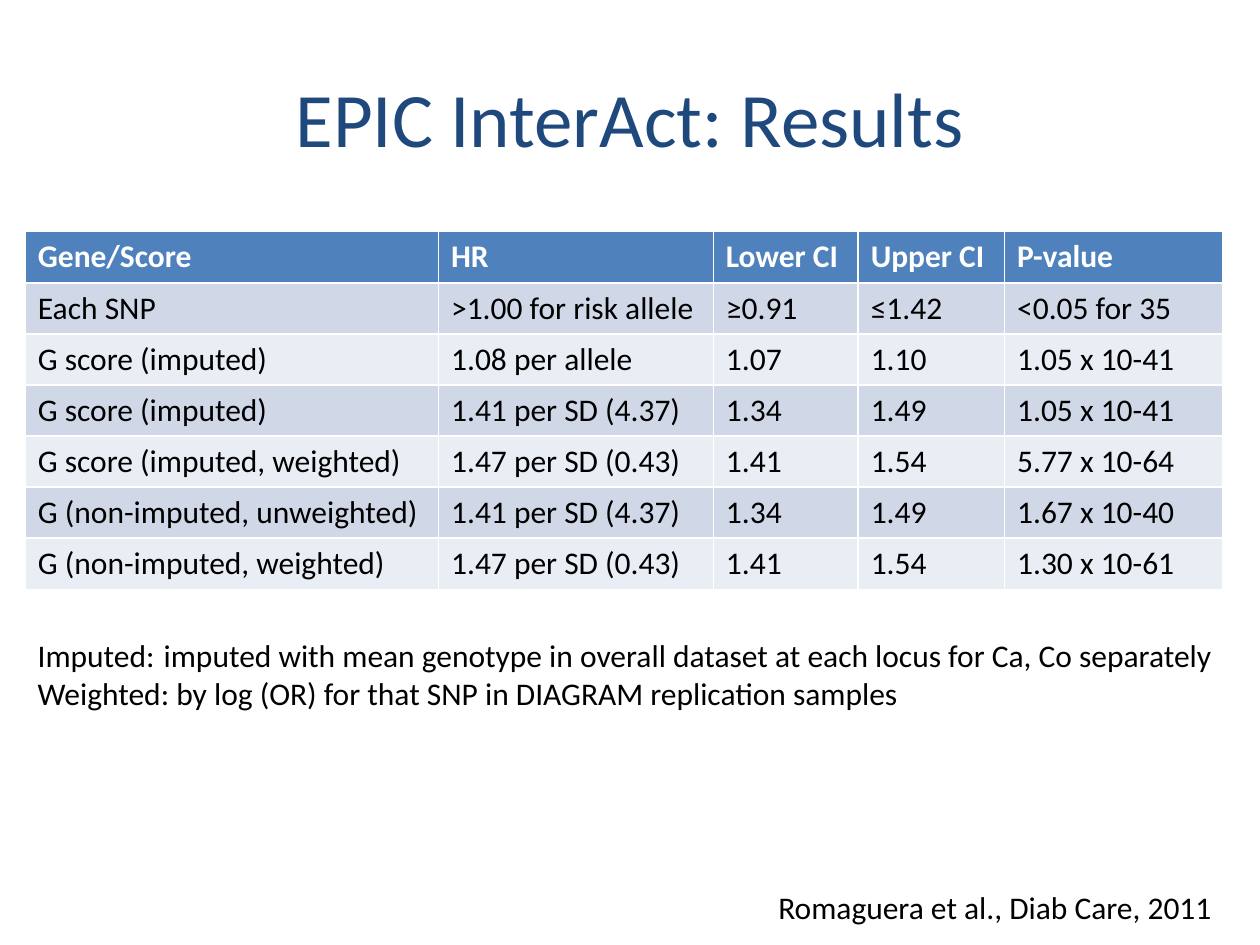
"""Build the slide with the EPIC InterAct results table."""
from dataclasses import dataclass
from pptx import Presentation
from pptx.dml.color import RGBColor as RGB
from pptx.enum.text import MSO_ANCHOR as Anchor, MSO_AUTO_SIZE as Fit, PP_ALIGN as Align
from pptx.util import Cm, Pt


@dataclass(frozen=True)
class Theme:
    font: str = "Calibri"
    big: int = 44
    body: int = 18
    navy: str = "1F497D"
    head: str = "4F81BD"
    bands: tuple = ("E9EDF4", "D0D8E8")
    white: str = "FFFFFF"
    black: str = "000000"


theme = Theme()


def style(frame, size, color, bold=False):
    for para in frame.paragraphs:
        for run in para.runs:
            font = run.font
            font.name, font.size, font.bold = theme.font, Pt(size), bold
            font.color.rgb = RGB.from_string(color)


def add_text(text, left, top, width, height, size, color):
    frame = slide.shapes.add_textbox(Cm(left), Cm(top), Cm(width), Cm(height)).text_frame
    frame.text = text
    style(frame, size, color)
    return frame


deck = Presentation()
deck.slide_width, deck.slide_height = Cm(25.4), Cm(19.05)
slide = deck.slides.add_slide(deck.slide_layouts[6])

title = add_text("EPIC InterAct: Results", 1.27, 0.76, 22.86, 3.18, theme.big, theme.navy)
title.word_wrap = True
title.vertical_anchor = Anchor.MIDDLE
title.paragraphs[0].alignment = Align.CENTER

rows = [
    ("Gene/Score", "HR", "Lower CI", "Upper CI", "P-value"),
    ("Each SNP", ">1.00 for risk allele", "≥0.91", "≤1.42", "<0.05 for 35"),
    ("G score (imputed)", "1.08 per allele", "1.07", "1.10", "1.05 x 10-41"),
    ("G score (imputed)", "1.41 per SD (4.37)", "1.34", "1.49", "1.05 x 10-41"),
    ("G score (imputed, weighted)", "1.47 per SD (0.43)", "1.41", "1.54", "5.77 x 10-64"),
    ("G (non-imputed, unweighted)", "1.41 per SD (4.37)", "1.34", "1.49", "1.67 x 10-40"),
    ("G (non-imputed, weighted)", "1.47 per SD (0.43)", "1.41", "1.54", "1.30 x 10-61"),
]
widths = [8.33, 5.54, 2.92, 2.95, 4.39]
high = 1.03
table = slide.shapes.add_table(
    len(rows), len(widths), Cm(0.51), Cm(4.67), Cm(sum(widths)), Cm(high * len(rows))
).table
for col, width in zip(table.columns, widths):
    col.width = Cm(width)
for r, row in enumerate(rows):
    table.rows[r].height = Cm(high)
    top = r == 0
    for c, text in enumerate(row):
        cell = table.cell(r, c)
        cell.text_frame.text = text
        style(cell.text_frame, theme.body, theme.white if top else theme.black, top)
        cell.fill.solid()
        cell.fill.fore_color.rgb = RGB.from_string(theme.head if top else theme.bands[r % 2])

notes = [
    ("Romaguera et al., Diab Care, 2011", 15.44, 17.78, 9.35, 1.02),
    ("Imputed: \timputed with mean genotype in overall dataset at each locus for Ca, Co separately\n"
     "Weighted: by log (OR) for that SNP in DIAGRAM replication samples", 0.51, 12.7, 24.49, 1.8),
]
for note in notes:
    frame = add_text(*note, theme.body, theme.black)
    frame.word_wrap = False
    frame.auto_size = Fit.SHAPE_TO_FIT_TEXT

deck.save("out.pptx")
